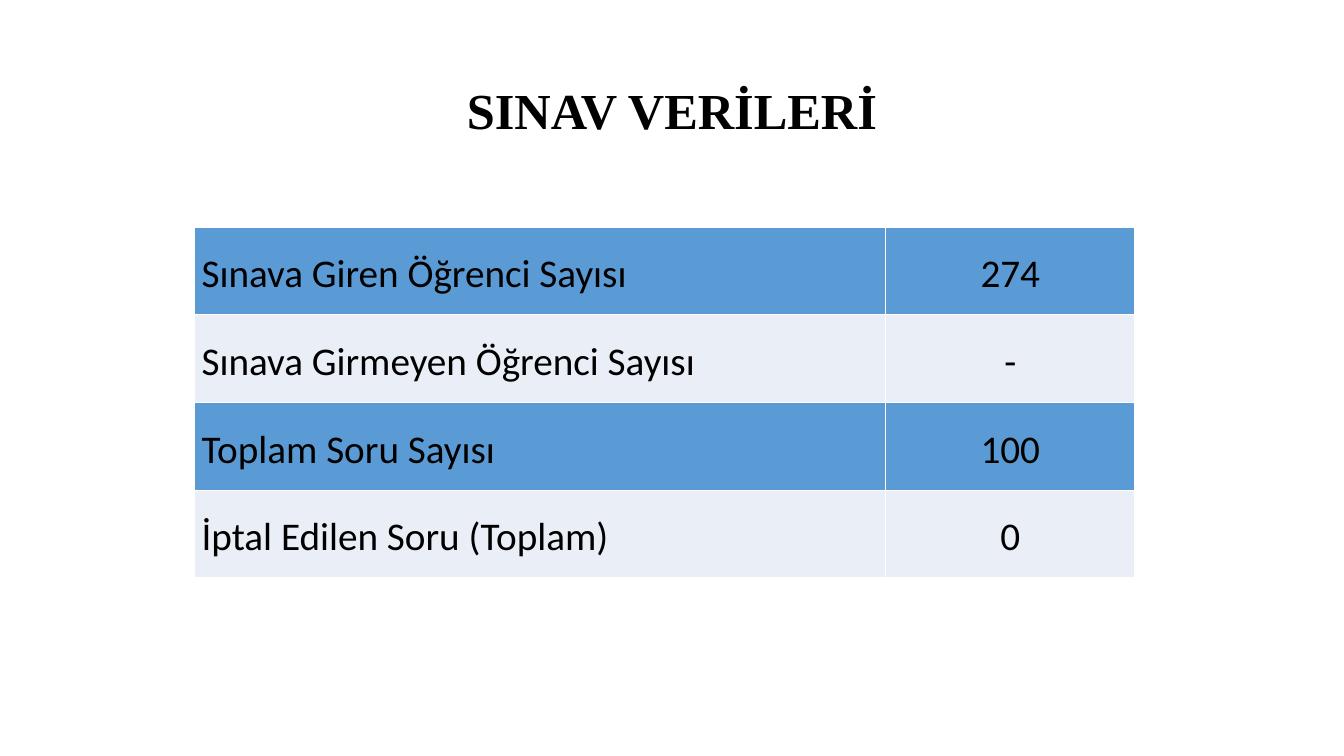
"""Build the exam data slide: a title above a two-column table."""
from pptx import Presentation
from pptx.dml.color import RGBColor
from pptx.enum.text import MSO_ANCHOR, PP_ALIGN
from pptx.util import Cm, Pt


def color(value):
    return RGBColor.from_string(value)


def write(frame, text, size=28, font="Calibri", bold=False, align=PP_ALIGN.LEFT, spacing=1.15):
    paragraph = frame.paragraphs[0]
    paragraph.alignment = align
    paragraph.line_spacing = spacing
    run = paragraph.add_run()
    run.text = text
    run.font.size = Pt(size)
    run.font.name = font
    run.font.bold = bold
    run.font.color.rgb = color("000000")


deck = Presentation()
deck.slide_width, deck.slide_height = Cm(33.87), Cm(19.05)
slide = deck.slides.add_slide(deck.slide_layouts[6])

heading = slide.shapes.add_textbox(Cm(2.33), Cm(1.01), Cm(29.21), Cm(3.68)).text_frame
heading.word_wrap = True
heading.vertical_anchor = MSO_ANCHOR.MIDDLE
write(heading, "SINAV VERİLERİ", size=36, font="Times New Roman", bold=True,
      align=PP_ALIGN.CENTER, spacing=0.9)

exam_data = [
    ("Sınava Giren Öğrenci Sayısı", "274"),
    ("Sınava Girmeyen Öğrenci Sayısı", "-"),
    ("Toplam Soru Sayısı", "100"),
    ("İptal Edilen Soru (Toplam)", "0"),
]
row_fills = ["5B9BD5", "EAEFF7"]
column_widths = [17.42, 6.28]
column_aligns = [PP_ALIGN.LEFT, PP_ALIGN.CENTER]
row_height = 2.21

exam_table = slide.shapes.add_table(
    len(exam_data), len(column_widths), Cm(4.9), Cm(5.72),
    Cm(sum(column_widths)), Cm(row_height * len(exam_data))).table
exam_table.first_row = False
exam_table.horz_banding = False

for column, width in zip(exam_table.columns, column_widths):
    column.width = Cm(width)

for row_index, entries in enumerate(exam_data):
    exam_table.rows[row_index].height = Cm(row_height)
    for column_index, entry in enumerate(entries):
        cell = exam_table.cell(row_index, column_index)
        cell.fill.solid()
        cell.fill.fore_color.rgb = color(row_fills[row_index % 2])
        cell.vertical_anchor = MSO_ANCHOR.MIDDLE
        cell.margin_left = cell.margin_right = Cm(0.18)
        cell.margin_top = cell.margin_bottom = Cm(0)
        write(cell.text_frame, entry, align=column_aligns[column_index])

deck.save("out.pptx")
